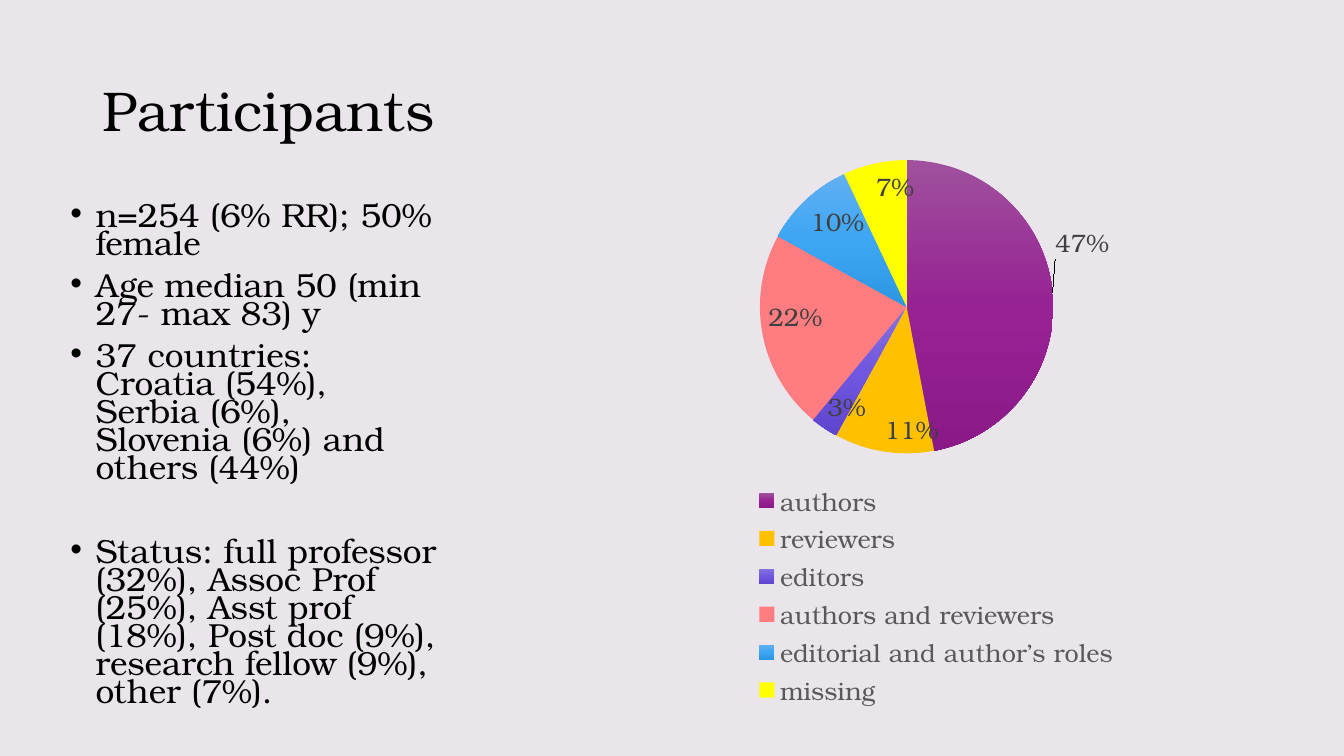
from typing import NamedTuple, Optional

from lxml import etree
from pptx import Presentation
from pptx import util as u
from pptx.chart.data import CategoryChartData
from pptx.dml.color import RGBColor
from pptx.enum import chart as ch, text
from pptx.oxml import parse_xml
from pptx.oxml.ns import nsdecls, qn

FONT = "TeX Gyre Bonum"
BACKGROUND = RGBColor(0xEA, 0xE5, 0xEB)
BLACK = RGBColor(0, 0, 0)
LABEL_GREY = RGBColor(0x40, 0x40, 0x40)
LEGEND_GREY = RGBColor(0x59, 0x59, 0x59)
PURPLE = (RGBColor(0x9F, 0x51, 0x9D), RGBColor(0x97, 0x22, 0x94), RGBColor(0x8B, 0x19, 0x88))
AMBER = (RGBColor(0xFF, 0xC0, 0x00),)
VIOLET = (RGBColor(0x86, 0x73, 0xDE), RGBColor(0x71, 0x57, 0xDF), RGBColor(0x60, 0x46, 0xCE))
CORAL = (RGBColor(0xFF, 0x7C, 0x80),)
BLUE = (RGBColor(0x62, 0xAF, 0xF1), RGBColor(0x3D, 0xA6, 0xF5), RGBColor(0x2C, 0x95, 0xE4))
YELLOW = (RGBColor(0xFF, 0xFF, 0x00),)
WIDTH, HEIGHT = u.Inches(13.33), u.Inches(7.5)


class Box(NamedTuple):
    """Left, top, width and height as shares of the slide."""
    x: float
    y: float
    w: float
    h: float

    def lengths(self) -> tuple:
        return (int(self.x * WIDTH), int(self.y * HEIGHT),
                int(self.w * WIDTH), int(self.h * HEIGHT))


class Bullet(NamedTuple):
    words: str
    before: int = 10


class Slice(NamedTuple):
    role: str
    percent: int
    colors: tuple  # one colour is solid, three make a gradient


TITLE_BOX = Box(0.069, 0.053, 0.863, 0.193)
BODY_BOX = Box(0.045, 0.265, 0.287, 0.635)
CHART_BOX = Box(0.439, 0.193, 0.516, 0.748)

BULLETS = [
    Bullet("n=254 (6% RR); 50% female"),
    Bullet("Age median 50 (min 27- max 83) y"),
    Bullet("37 countries: Croatia (54%), Serbia (6%), Slovenia (6%) and others (44%)"),
    Bullet("Status: full professor (32%), Assoc Prof (25%), Asst prof (18%), Post doc (9%), "
           "research fellow (9%), other (7%).", before=40),
]
SLICES = [
    Slice("authors", 47, PURPLE),
    Slice("reviewers", 11, AMBER),
    Slice("editors", 3, VIOLET),
    Slice("authors and reviewers", 22, CORAL),
    Slice("editorial and author’s roles", 10, BLUE),
    Slice("missing", 7, YELLOW),
]


def style_font(font, size: float, color: RGBColor) -> None:
    font.name, font.size = FONT, u.Pt(size)
    font.color.rgb = color


def add_text(tf, words: str, *, size: float, spacing: float, first: bool = True,
             before: float = 0, bullet: Optional[str] = None) -> None:
    p = tf.paragraphs[0] if first else tf.add_paragraph()
    p.line_spacing, p.space_before = spacing, u.Pt(before)
    r = p.add_run()
    r.text = words
    style_font(r.font, size, BLACK)
    if bullet:
        pPr = p._p.get_or_add_pPr()
        indent = u.Inches(0.25)
        pPr.set("marL", str(indent))
        pPr.set("indent", str(-indent))
        etree.SubElement(pPr, qn("a:buFont")).set("typeface", "Arial")
        etree.SubElement(pPr, qn("a:buChar")).set("char", bullet)


def add_frame(slide, box: Box, anchor):
    tf = slide.shapes.add_textbox(*box.lengths()).text_frame
    tf.word_wrap, tf.vertical_anchor = True, anchor
    return tf


def set_layout(element, index: int, **settings) -> None:
    """Give a chart part a manual layout in shares of the chart."""
    for old in element.findall(qn("c:layout")):
        element.remove(old)
    rows = "".join(f'<c:{name} val="{value}"/>' for name, value in settings.items())
    element.insert(index, parse_xml(
        f'<c:layout {nsdecls("c")}><c:manualLayout>{rows}</c:manualLayout></c:layout>'))


def fill_slice(point, colors: tuple) -> None:
    fill = point.format.fill
    if len(colors) == 1:
        fill.solid()
        fill.fore_color.rgb = colors[0]
        return
    stops = "".join(f'<a:gs pos="{i * 50000}"><a:srgbClr val="{c}"/></a:gs>'
                    for i, c in enumerate(colors))
    spPr = point.format._element.get_or_add_spPr() if hasattr(
        point.format._element, "get_or_add_spPr") else point.format._element
    spPr.insert(0, parse_xml(
        f'<a:gradFill {nsdecls("a")} rotWithShape="1"><a:gsLst>{stops}</a:gsLst>'
        '<a:lin ang="5400000" scaled="0"/></a:gradFill>'))


def add_pie(slide, box: Box, slices: list) -> None:
    data = CategoryChartData(number_format="General")
    data.categories = [s.role for s in slices]
    data.add_series("Series 1", [s.percent for s in slices])
    chart = slide.shapes.add_chart(ch.XL_CHART_TYPE.PIE, *box.lengths(), data).chart
    chart.has_title = False
    style_font(chart.font, 10, BLACK)
    plot = chart.plots[0]
    plot.vary_by_categories = True
    series = plot.series[0]
    for i, s in enumerate(slices):
        fill_slice(series.points[i], s.colors)
    plot_area = chart._chartSpace.find(f'{qn("c:chart")}/{qn("c:plotArea")}')
    set_layout(plot_area, 0, layoutTarget="inner", xMode="edge", yMode="edge",
               x=0.245, y=0.025, w=0.423, h=0.519)

    # Percent labels
    labels = series.data_labels
    labels.show_percentage, labels.show_value = True, False
    labels.number_format, labels.number_format_is_linked = "0%", False
    labels.position = ch.XL_LABEL_POSITION.INSIDE_END
    style_font(labels.font, 18, LABEL_GREY)

    # The first label stands outside its slice
    label = series.points[0].data_label
    style_font(label.font, 18, LABEL_GREY)
    label.position = ch.XL_LABEL_POSITION.INSIDE_END
    dLbl = labels._element.find(qn("c:dLbl"))
    dLbl.find(qn("c:showVal")).set("val", "0")
    dLbl.find(qn("c:showPercent")).set("val", "1")
    set_layout(dLbl, 1, x=0.09, y=-0.12)

    # Legend
    chart.has_legend = True
    legend = chart.legend
    legend.position = ch.XL_LEGEND_POSITION.BOTTOM
    legend.include_in_layout = False
    style_font(legend.font, 18, LEGEND_GREY)
    set_layout(legend._element, 1, xMode="edge", yMode="edge", x=0.234, y=0.59, w=0.53, h=0.41)


def main() -> None:
    prs = Presentation()
    prs.slide_width, prs.slide_height = WIDTH, HEIGHT
    slide = prs.slides.add_slide(prs.slide_layouts[6])
    slide.background.fill.solid()
    slide.background.fill.fore_color.rgb = BACKGROUND

    # Title
    tf = add_frame(slide, TITLE_BOX, text.MSO_ANCHOR.MIDDLE)
    add_text(tf, "Participants", size=40, spacing=0.9)

    # Bullets
    tf = add_frame(slide, BODY_BOX, text.MSO_ANCHOR.TOP)
    for i, b in enumerate(BULLETS):
        add_text(tf, b.words, size=23.8, spacing=0.7, first=i == 0, before=b.before, bullet="•")

    # Pie of roles
    add_pie(slide, CHART_BOX, SLICES)
    prs.save("out.pptx")


if __name__ == "__main__":
    main()
